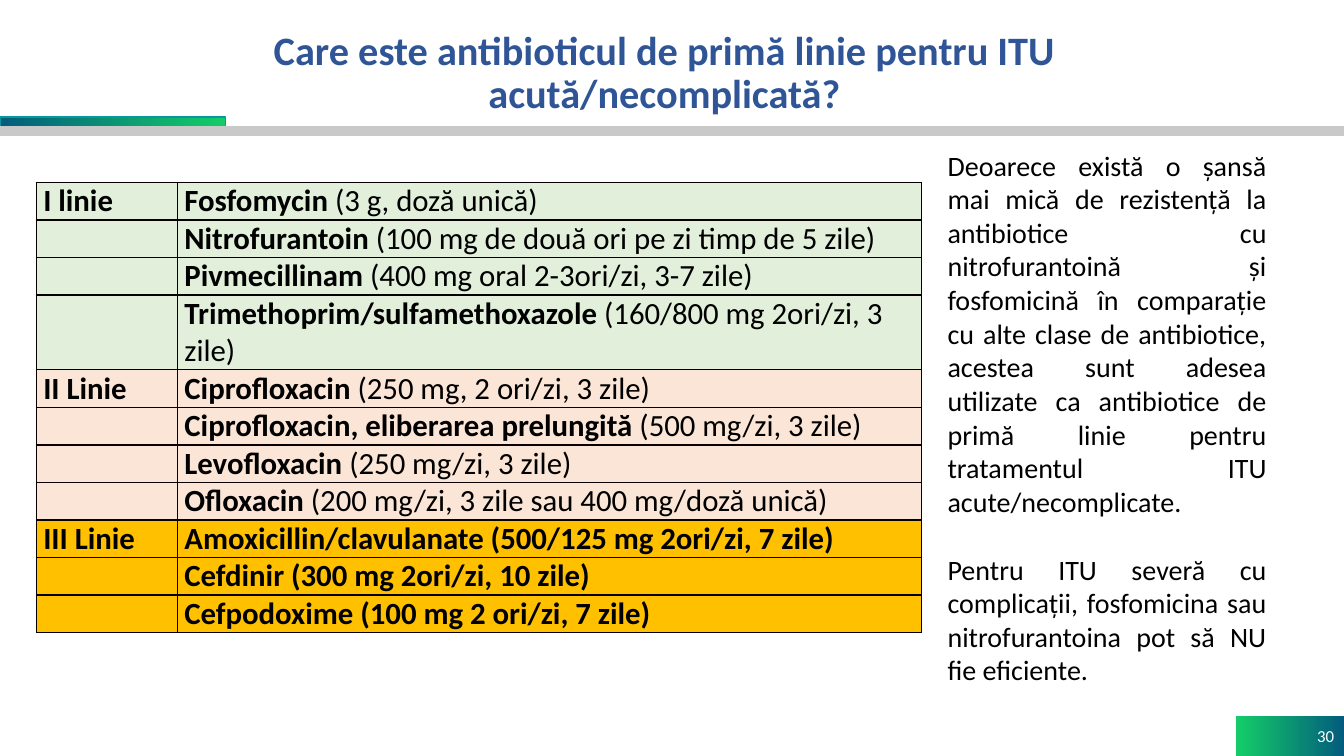
from lxml import etree
from pptx import Presentation, util as u
from pptx.dml import color
from pptx.enum import shapes, text
from pptx.oxml import ns

COLORS = {
    "green": "14CD68", "blue": "035C7D", "teal": "08979C", "gray": "C9C9C9",
    "title": "2F5597", "text": "000000", "white": "FFFFFF", "border": "080000",
    "first": "E2EFDA", "second": "FBE5D6", "third": "FFC000",
}
FONT = "Calibri"
TITLE = "Care este antibioticul de primă linie pentru ITU acută/necomplicată?"
PAGE = "30"

# (line label, fill, [(bold part, regular part), ...])
LINES = [
    ("I linie", "first", [
        ("Fosfomycin ", "(3 g, doză unică)"),
        ("Nitrofurantoin ", "(100 mg de două ori pe zi timp de 5 zile)"),
        ("Pivmecillinam ", "(400 mg oral 2-3ori/zi, 3-7 zile)"),
        ("Trimethoprim/sulfamethoxazole ", "(160/800 mg 2ori/zi, 3 zile)"),
    ]),
    ("II Linie", "second", [
        ("Ciprofloxacin ", "(250 mg, 2 ori/zi, 3 zile)"),
        ("Ciprofloxacin, eliberarea prelungită ", "(500 mg/zi, 3 zile)"),
        ("Levofloxacin ", "(250 mg/zi, 3 zile)"),
        ("Ofloxacin ", "(200 mg/zi, 3 zile sau 400 mg/doză unică)"),
    ]),
    ("III Linie", "third", [
        ("Amoxicillin/clavulanate (500/125 mg 2ori/zi, 7 zile)", ""),
        ("Cefdinir (300 mg 2ori/zi, 10 zile)", ""),
        ("Cefpodoxime (100 mg 2 ori/zi, 7 zile)", ""),
    ]),
]
NOTES = [
    "Deoarece există o șansă mai mică de rezistență la antibiotice cu "
    "nitrofurantoină și fosfomicină în comparație cu alte clase de antibiotice, "
    "acestea sunt adesea utilizate ca antibiotice de primă linie pentru "
    "tratamentul ITU acute/necomplicate.",
    "Pentru ITU severă cu complicații, fosfomicina sau nitrofurantoina pot să NU "
    "fie eficiente.",
]

WIDTH, HEIGHT = 13.33, 7.5
RULE_TOP = 1.26
COLUMNS = (1.4, 7.38)
ROW_HEIGHT = 0.34


def rgb(name):
    return color.RGBColor.from_string(COLORS[name])


def box(left, top, width, height):
    return [u.Inches(value) for value in (left, top, width, height)]


def add_run(paragraph, words, size, color_name="text", bold=False):
    run = paragraph.add_run()
    run.text = words
    run.font.name, run.font.size, run.font.bold = FONT, u.Pt(size), bold
    run.font.color.rgb = rgb(color_name)


def add_bar(slide, place, fills, line=None):
    """Add a rectangle with one colour or a left-to-right gradient of two."""
    bar = slide.shapes.add_shape(shapes.MSO_SHAPE.RECTANGLE, *box(*place))
    bar.shadow.inherit = False
    if len(fills) == 1:
        bar.fill.solid()
        bar.fill.fore_color.rgb = rgb(fills[0])
    else:
        bar.fill.gradient()
        bar.fill.gradient_angle = 0
        for stop, name in zip(bar.fill.gradient_stops, fills):
            stop.color.rgb = rgb(name)
    if line:
        bar.line.color.rgb = rgb(line)
        bar.line.width = u.Pt(1)
    else:
        bar.line.fill.background()
    return bar


def style_cell(cell, fill):
    cell.margin_left = cell.margin_right = u.Inches(0.07)
    cell.margin_top = cell.margin_bottom = 0
    properties = cell._tc.get_or_add_tcPr()
    for side in ("a:lnL", "a:lnR", "a:lnT", "a:lnB"):
        line = etree.SubElement(properties, ns.qn(side), w=str(u.Pt(1)))
        solid = etree.SubElement(line, ns.qn("a:solidFill"))
        etree.SubElement(solid, ns.qn("a:srgbClr"), val=COLORS["border"])
    cell.fill.solid()
    cell.fill.fore_color.rgb = rgb(fill)


def add_title(slide):
    title = slide.shapes.title
    title.left, title.top, title.width, title.height = box(0.92, 0.36, 11.34, 0.75)
    frame = title.text_frame
    frame.auto_size = text.MSO_AUTO_SIZE.NONE
    frame.vertical_anchor = text.MSO_ANCHOR.MIDDLE
    paragraph = frame.paragraphs[0]
    paragraph.alignment = text.PP_ALIGN.CENTER
    paragraph.line_spacing = 0.9
    add_run(paragraph, TITLE, 28.8, "title", True)


def add_antibiotics(slide):
    rows = [(label if index == 0 else "", fill, drug)
            for label, fill, drugs in LINES for index, drug in enumerate(drugs)]
    place = box(0.36, 1.81, sum(COLUMNS), ROW_HEIGHT * len(rows))
    table = slide.shapes.add_table(len(rows), len(COLUMNS), *place).table
    table.first_row = table.horz_banding = False
    for column, width in zip(table.columns, COLUMNS):
        column.width = u.Inches(width)
    for index, (label, fill, (name, dose)) in enumerate(rows):
        table.rows[index].height = u.Inches(ROW_HEIGHT)
        for column, parts in enumerate([(label, ""), (name, dose)]):
            cell = table.cell(index, column)
            style_cell(cell, fill)
            for words, bold in zip(parts, (True, False)):
                if words:
                    add_run(cell.text_frame.paragraphs[0], words, 22, bold=bold)


def add_notes_column(slide):
    frame = slide.shapes.add_textbox(*box(9.3, 1.42, 3.36, 5.49)).text_frame
    frame.word_wrap = True
    for index, words in enumerate(NOTES):
        paragraph = frame.add_paragraph() if index else frame.paragraphs[0]
        paragraph.alignment = text.PP_ALIGN.JUSTIFY
        paragraph.space_before = u.Pt(24.4 if index else 0)
        add_run(paragraph, words, 20)


def add_page_number(slide):
    width, height = 1.07, 0.4
    badge = add_bar(slide, (WIDTH - width, HEIGHT - height, width, height),
                    ("green", "blue"))
    badge.text_frame.vertical_anchor = text.MSO_ANCHOR.MIDDLE
    paragraph = badge.text_frame.paragraphs[0]
    paragraph.alignment = text.PP_ALIGN.RIGHT
    add_run(paragraph, PAGE, 12, "white")


def main():
    presentation = Presentation()
    presentation.slide_width = u.Inches(WIDTH)
    presentation.slide_height = u.Inches(HEIGHT)
    slide = presentation.slides.add_slide(presentation.slide_layouts[5])
    add_bar(slide, (0, RULE_TOP - 0.1, 2.24, 0.1), ("blue", "green"), "teal")
    add_bar(slide, (0, RULE_TOP, WIDTH, 0.08), ("gray",), "gray")
    add_page_number(slide)
    add_title(slide)
    add_antibiotics(slide)
    add_notes_column(slide)
    presentation.save("out.pptx")


if __name__ == "__main__":
    main()
